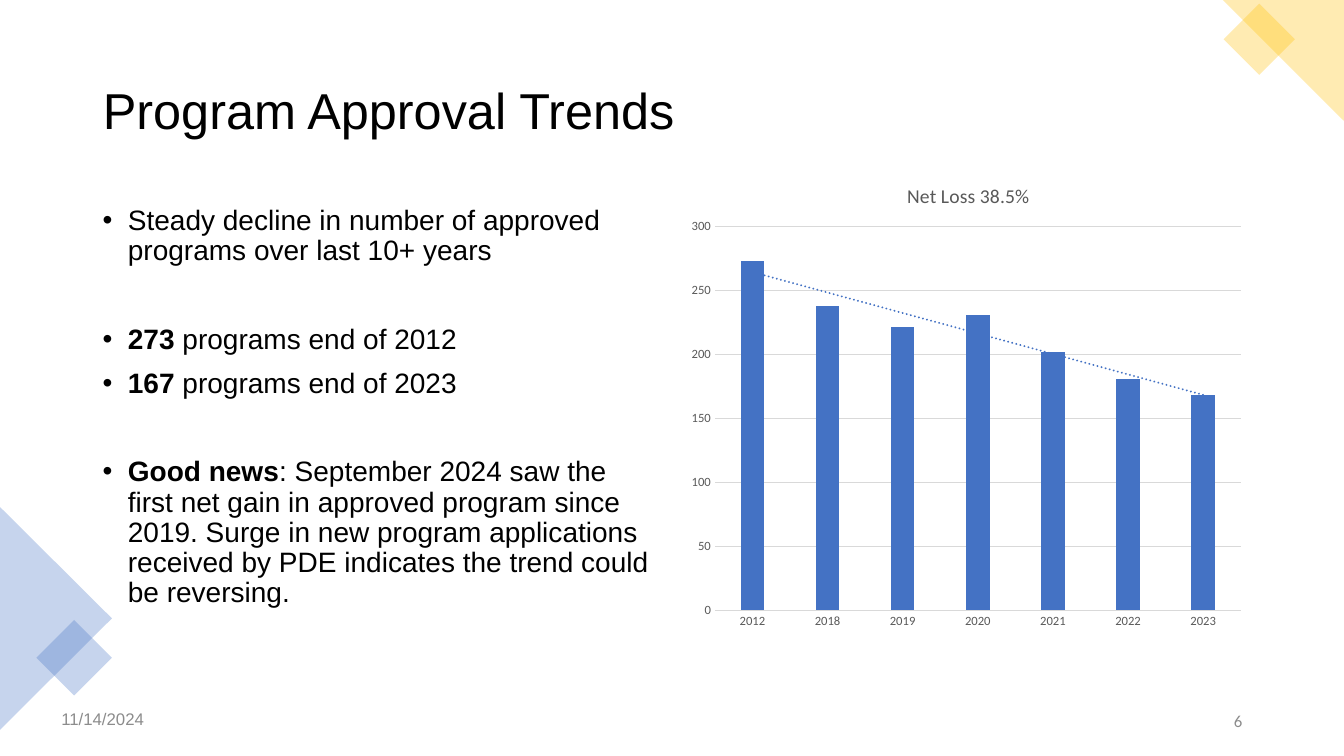
from pptx import Presentation
from pptx.chart.data import CategoryChartData
from pptx.dml.color import RGBColor
from pptx.enum.chart import XL_CHART_TYPE, XL_TICK_MARK
from pptx.enum.shapes import MSO_SHAPE
from pptx.enum.text import MSO_ANCHOR, PP_ALIGN
from pptx.oxml import parse_xml
from pptx.oxml.ns import nsdecls, qn
from pptx.util import Pt

EMU_PER_PX = 9144  # 100 px to the inch
COLORS = {"text": "000000", "footer": "8C8C8C", "chart_text": "595959",
          "grid": "D9D9D9", "blue": "4472C4", "gold": "FFC000"}


def px(value):
    return value * EMU_PER_PX


def color(name):
    return RGBColor.from_string(COLORS[name])


class TrendSlide:
    font = "Arial"
    chart_font = "Calibri"

    def __init__(self, presentation):
        self.slide = presentation.slides.add_slide(presentation.slide_layouts[5])

    def set_font(self, font, size, color_name, name=None, bold=False):
        font.name = name or self.font
        font.size = Pt(size)
        font.bold = bold
        font.color.rgb = color(color_name)

    def add_run(self, paragraph, text, size, color_name, name=None, bold=False):
        run = paragraph.add_run()
        run.text = text
        self.set_font(run.font, size, color_name, name, bold)

    def title(self, box, text):
        shape = self.slide.shapes.title
        shape.left, shape.top, shape.width, shape.height = map(px, box)
        frame = shape.text_frame
        frame.vertical_anchor = MSO_ANCHOR.MIDDLE
        paragraph = frame.paragraphs[0]
        paragraph.alignment = PP_ALIGN.LEFT
        paragraph.line_spacing = 0.9
        self.add_run(paragraph, text, 36, "text")

    def decoration(self, kind, box, rotation, color_name, apex=None):
        shape = self.slide.shapes.add_shape(kind, *map(px, box))
        shape.shadow.inherit = False
        shape.rotation = rotation
        if apex is not None:
            shape.adjustments[0] = apex
        shape.fill.solid()
        shape.fill.fore_color.rgb = color(color_name)
        shape.line.fill.background()
        fill_color = shape._element.spPr.find(qn("a:solidFill"))[0]
        fill_color.append(parse_xml(f'<a:alpha {nsdecls("a")} val="30000"/>'))

    def text_frame(self, box):
        frame = self.slide.shapes.add_textbox(*map(px, box)).text_frame
        frame.word_wrap = True
        return frame

    def footer(self, box, text, alignment, name):
        frame = self.text_frame(box)
        frame.vertical_anchor = MSO_ANCHOR.MIDDLE
        paragraph = frame.paragraphs[0]
        paragraph.alignment = alignment
        self.add_run(paragraph, text, 12, "footer", name)

    def bullets(self, box, items):
        frame = self.text_frame(box)
        for index, (space_before, bold_text, plain_text) in enumerate(items):
            paragraph = frame.add_paragraph() if index else frame.paragraphs[0]
            properties = paragraph._p.get_or_add_pPr()
            properties.set("marL", str(px(25)))
            properties.set("indent", str(-px(25)))
            properties.append(parse_xml(f'<a:buFont {nsdecls("a")} typeface="Arial"/>'))
            properties.append(parse_xml(f'<a:buChar {nsdecls("a")} char="•"/>'))
            paragraph.line_spacing = 0.9
            paragraph.space_before = Pt(space_before)
            if bold_text:
                self.add_run(paragraph, bold_text, 20, "text", bold=True)
            self.add_run(paragraph, plain_text, 20, "text")

    def column_chart(self, box, title, values):
        data = CategoryChartData()
        data.categories = list(values)
        data.add_series("Series 1", list(values.values()))
        chart = self.slide.shapes.add_chart(
            XL_CHART_TYPE.COLUMN_CLUSTERED, *map(px, box), data).chart
        self.set_font(chart.font, 10, "text", self.chart_font)
        chart.has_legend = False
        chart.has_title = True
        self.add_run(chart.chart_title.text_frame.paragraphs[0], title, 14,
                     "chart_text", self.chart_font)

        # Columns
        plot = chart.plots[0]
        plot.gap_width = 219
        plot.overlap = -27
        plot.vary_by_categories = False
        series = plot.series[0]
        series.format.fill.solid()
        series.format.fill.fore_color.rgb = color("blue")
        self.add_trend_line(series)

        # Axes
        for axis in (chart.category_axis, chart.value_axis):
            axis.major_tick_mark = axis.minor_tick_mark = XL_TICK_MARK.NONE
            self.set_font(axis.tick_labels.font, 9, "chart_text", self.chart_font)
        value_axis = chart.value_axis
        value_axis.minimum_scale, value_axis.maximum_scale = 0, 300
        value_axis.major_unit = 50
        value_axis.format.line.fill.background()
        for line in (chart.category_axis.format.line,
                     value_axis.major_gridlines.format.line):
            line.color.rgb = color("grid")
            line.width = Pt(0.75)

        # Places of the title and the plot, as shares of the chart
        root = chart._chartSpace
        self.place(root.find(".//" + qn("c:title")), 1, {"x": 0.39, "y": 0.04})
        self.place(root.find(".//" + qn("c:plotArea")), 0,
                   {"x": 0.06, "y": 0.14, "w": 0.92, "h": 0.8}, inner=True)

    def add_trend_line(self, series):
        series._element.find(qn("c:cat")).addprevious(parse_xml(
            f'<c:trendline {nsdecls("c", "a")}><c:spPr><a:ln w="{Pt(1.5)}" cap="rnd">'
            f'<a:solidFill><a:srgbClr val="{COLORS["blue"]}"/></a:solidFill>'
            '<a:prstDash val="sysDot"/></a:ln></c:spPr>'
            '<c:trendlineType val="linear"/><c:dispRSqr val="0"/>'
            '<c:dispEq val="0"/></c:trendline>'))

    def place(self, element, index, shares, inner=False):
        for layout in element.findall(qn("c:layout")):
            element.remove(layout)
        target = '<c:layoutTarget val="inner"/>' if inner else ""
        modes = "".join(f'<c:{key}Mode val="edge"/>' for key in "xy")
        sizes = "".join(f'<c:{key} val="{share}"/>' for key, share in shares.items())
        element.insert(index, parse_xml(
            f'<c:layout {nsdecls("c")}><c:manualLayout>{target}{modes}{sizes}'
            '</c:manualLayout></c:layout>'))


def main():
    presentation = Presentation()
    presentation.slide_width, presentation.slide_height = px(1333), px(750)
    page = TrendSlide(presentation)

    # Corner decorations
    triangle, square = MSO_SHAPE.ISOSCELES_TRIANGLE, MSO_SHAPE.RECTANGLE
    page.decoration(triangle, (1213, 0, 120, 120), 270, "gold", apex=1)
    page.decoration(square, (1224, 14, 50, 50), 45, "gold")
    page.decoration(square, (47, 626, 53, 53), 45, "blue")
    page.decoration(triangle, (-55, 558, 221, 111), 90, "blue", apex=0.5)

    # Title and bullets
    page.title((92, 40, 1150, 145), "Program Approval Trends")
    page.bullets((92, 200, 567, 476), [
        (0, "", "Steady decline in number of approved programs over last 10+ years"),
        (41.5, "273", " programs end of 2012"),
        (10, "167", " programs end of 2023"),
        (41.5, "Good news", ": September 2024 saw the first net gain in approved "
         "program since 2019. Surge in new program applications received by PDE "
         "indicates the trend could be reversing."),
    ])

    # Chart
    page.column_chart((675, 158, 567, 476), "Net Loss 38.5%", {
        "2012": 273, "2018": 238, "2019": 221, "2020": 231,
        "2021": 202, "2022": 181, "2023": 168})

    # Footer
    page.footer((942, 695, 300, 40), "6", PP_ALIGN.RIGHT, "Calibri")
    page.footer((51, 693, 450, 40), "11/14/2024", PP_ALIGN.LEFT, "Arial")
    presentation.save("out.pptx")


if __name__ == "__main__":
    main()
